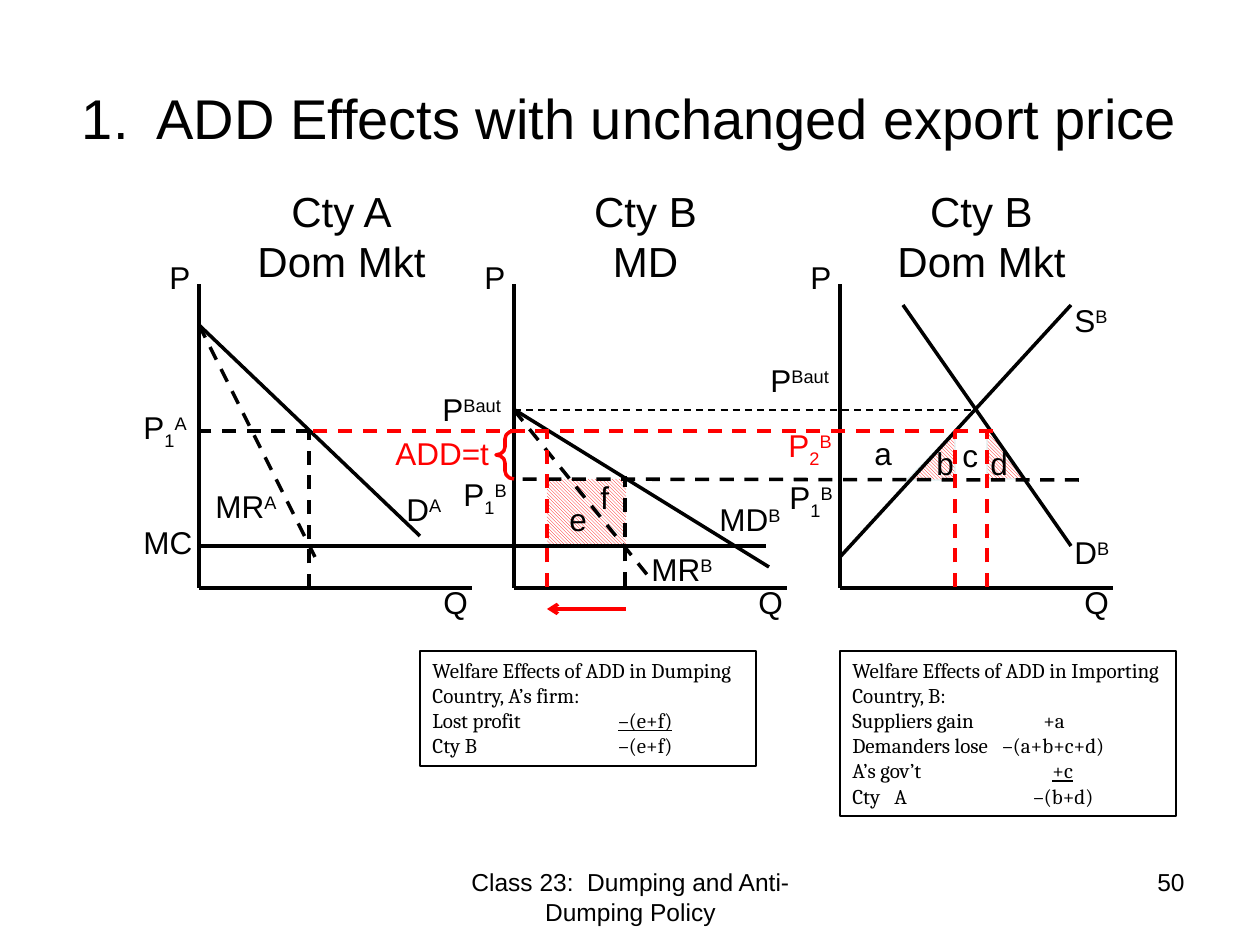
from lxml.etree import SubElement
from pptx import Presentation
from pptx.dml.color import RGBColor
from pptx.enum.dml import MSO_LINE, MSO_PATTERN
from pptx.enum.shapes import MSO_CONNECTOR, MSO_SHAPE
from pptx.enum.text import MSO_ANCHOR, MSO_AUTO_SIZE, PP_ALIGN
from pptx.oxml.ns import qn
from pptx.util import Pt

PX = 914400 / 126
COLORS = {"black": "000000", "red": "FF0000", "white": "FFFFFF", "pale": "E0F1F2"}
TITLE = "1.  ADD Effects with unchanged export price"
FOOTER = "Class 23:  Dumping and Anti-Dumping Policy"
PAGE = "50"

AXIS_TOP, AXIS_BOTTOM, AXIS_WIDTH = 284, 588, 273
PANELS = [
    (199, 242, ["Cty A", "Dom Mkt"]),
    (514, 546, ["Cty B", "MD"]),
    (840, 882, ["Cty B", "Dom Mkt"]),
]
HATCHED = [
    (MSO_SHAPE.RIGHT_TRIANGLE, (987, 426, 37, 53), False),
    (MSO_SHAPE.RIGHT_TRIANGLE, (907, 431, 48, 49), True),
    (MSO_SHAPE.RECTANGLE, (547, 479, 79, 67), False),
]
SOLID_LINES = [
    (199, 325, 420, 536),
    (903, 305, 1071, 546),
    (840, 557, 1071, 305),
    (515, 410, 769, 567),
    (199, 546, 766, 546),
]
DASHED_LINES = [
    (514, 410, 649, 577),
    (199, 325, 315, 557),
    (309, 588, 309, 431),
    (310, 431, 199, 431),
    (1079, 480, 515, 479),
    (625, 586, 625, 476),
]
RED_DASHED_LINES = [(993, 431, 310, 431)] + [(x, 587, x, 431) for x in (547, 955, 987)]
AUTARKY_LINE = (514, 410, 976, 410)
QUANTITY_ARROW = (626, 609, 547, 609)
BRACE = (496, 431, 18, 48)

LABELS = [
    ("S|^B", 1062, 295, "black"),
    ("D|^B", 1062, 527, "black"),
    ("MD|^B", 707, 494, "black"),
    ("MR|^B", 639, 544, "black"),
    ("P|^Baut", 758, 355, "black"),
    ("P|^Baut", 430, 384, "black"),
    ("D|^A", 394, 484, "black"),
    ("MR|^A", 203, 481, "black"),
    ("MC", 131, 517, "black"),
    ("P|_1|^B", 451, 469, "black"),
    ("P|_1|^B", 777, 472, "black"),
    ("P|_1|^A", 131, 402, "black"),
    ("P|_2|^B", 776, 420, "red"),
    ("ADD=t", 383, 428, "red"),
    ("a", 862, 428, "black"),
    ("b", 924, 438, "black"),
    ("c", 950, 430, "black"),
    ("d", 978, 438, "black"),
    ("e", 557, 494, "black"),
    ("f", 588, 472, "black"),
]
WELFARE = [
    ((420, 651, 336, 115), [
        ([], "Welfare Effects of ADD in Dumping Country, A’s firm:", ""),
        ([173, 186, 245], "Lost profit\t", "\t–(e+f)\t"),
        ([186], "Cty B\t–(e+f)", ""),
    ]),
    ((840, 651, 336, 165), [
        ([], "Welfare Effects of ADD in Importing Country, B:", ""),
        ([191], "Suppliers gain\t+a", ""),
        ([150], "Demanders lose\t–(a+b+c+d)", ""),
        ([159, 200], "A’s gov’t\t", "\t+c"),
        ([42, 181], "Cty\tA\t–(b+d)", ""),
    ]),
]

prs = Presentation()
prs.slide_width, prs.slide_height = round(1260 * PX), round(945 * PX)
slide = prs.slides.add_slide(prs.slide_layouts[5])


def emu(*lengths):
    return [round(v * PX) for v in lengths]


def rgb(name):
    return RGBColor.from_string(COLORS[name])


def add_run(p, text, size, color="black", font="Arial", **extra):
    r = p.add_run()
    r.text = text
    for key, value in {"name": font, "size": Pt(size), **extra}.items():
        setattr(r.font, key, value)
    r.font.color.rgb = rgb(color)
    return r


def add_text(box, lines, size, color="black", align=PP_ALIGN.LEFT):
    tf = slide.shapes.add_textbox(*emu(*box)).text_frame
    tf.word_wrap = True
    for i, line in enumerate(lines):
        p = tf.paragraphs[0] if i == 0 else tf.add_paragraph()
        p.alignment = align
        for part in line.split("|"):
            r = add_run(p, part.lstrip("^_"), size, color)
            if part[0] in "^_":
                base = "30000" if part[0] == "^" else "-25000"
                r.font._element.set("baseline", base)


def add_line(ends, color="black", width=2, dash=None, arrow=False):
    s = slide.shapes.add_connector(MSO_CONNECTOR.STRAIGHT, *emu(*ends))
    s.line.color.rgb = rgb(color)
    s.line.width = Pt(width)
    if dash:
        s.line.dash_style = dash
    if arrow:
        SubElement(s.line._get_or_add_ln(), qn("a:tailEnd"), type="arrow")
    SubElement(s._element.spPr, qn("a:effectLst"))


def add_outline(kind, box, color, width):
    s = slide.shapes.add_shape(kind, *emu(*box))
    s.shadow.inherit = False
    s.fill.background()
    s.line.color.rgb = rgb(color)
    s.line.width = Pt(width)
    return s


for kind, box, flipped in HATCHED:
    s = add_outline(kind, box, "pale", 0.75)
    s.fill.patterned()
    s.fill.pattern = MSO_PATTERN.DARK_DOWNWARD_DIAGONAL
    s.fill.fore_color.rgb = rgb("red")
    s.fill.back_color.rgb = rgb("white")
    if flipped:
        s._element.spPr.xfrm.set("flipH", "1")
    if kind == MSO_SHAPE.RECTANGLE:
        s.line.fill.background()

title = slide.shapes.title
title.left, title.top, title.width, title.height = emu(63, 38, 1134, 158)
tf = title.text_frame
for key, value in {"auto_size": MSO_AUTO_SIZE.NONE, "word_wrap": True,
                   "vertical_anchor": MSO_ANCHOR.MIDDLE}.items():
    setattr(tf, key, value)
tf.paragraphs[0].alignment = PP_ALIGN.CENTER
add_run(tf.paragraphs[0], TITLE, 32)

for x, heading_x, heading in PANELS:
    add_line((x, AXIS_BOTTOM, x + AXIS_WIDTH, AXIS_BOTTOM))
    add_line((x, AXIS_BOTTOM, x, AXIS_TOP))
    add_text((x - 42, 252, 94, 50), ["P"], 18)
    add_text((x + 232, 577, 94, 50), ["Q"], 18)
    add_text((heading_x, 179, 199, 115), heading, 24, align=PP_ALIGN.CENTER)

for ends in SOLID_LINES:
    add_line(ends)
add_line(AUTARKY_LINE, width=1, dash=MSO_LINE.DASH)
for color, lines in (("black", DASHED_LINES), ("red", RED_DASHED_LINES)):
    for ends in lines:
        add_line(ends, color, dash=MSO_LINE.DASH)
add_line(QUANTITY_ARROW, "red", arrow=True)
brace = add_outline(MSO_SHAPE.LEFT_BRACE, BRACE, "red", 2)
brace.adjustments[0] = 0.44

for text, x, y, color in LABELS:
    add_text((x, y, 147 if text == "ADD=t" else 94, 50), [text], 18, color)

for box, rows in WELFARE:
    s = add_outline(MSO_SHAPE.RECTANGLE, box, "black", 1.5)
    tf = s.text_frame
    tf.word_wrap = True
    tf.vertical_anchor = MSO_ANCHOR.TOP
    for i, (tabs, plain, underlined) in enumerate(rows):
        p = tf.paragraphs[0] if i == 0 else tf.add_paragraph()
        p.alignment = PP_ALIGN.LEFT
        if tabs:
            tab_list = SubElement(p._p.get_or_add_pPr(), qn("a:tabLst"))
            for pos in emu(*tabs):
                SubElement(tab_list, qn("a:tab"), pos=str(pos), algn="l")
        add_run(p, plain, 12, font="Cambria")
        if underlined:
            add_run(p, underlined, 12, font="Cambria", underline=True)

add_text((431, 861, 399, 66), [FOOTER], 14, align=PP_ALIGN.CENTER)
add_text((903, 861, 294, 66), [PAGE], 14, align=PP_ALIGN.RIGHT)

prs.save("out.pptx")
